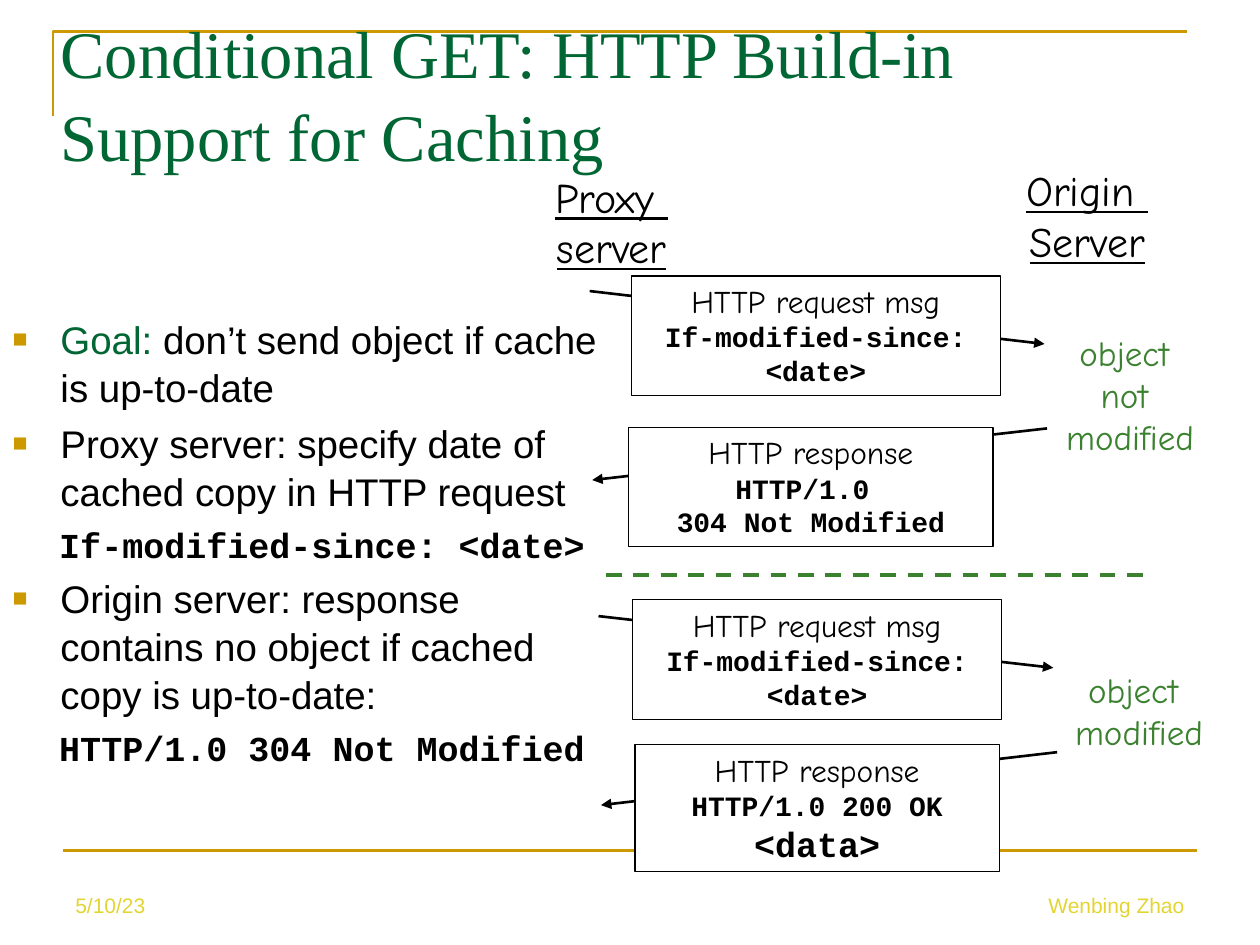
"""Build a slide on how conditional GET supports caching in HTTP."""
from lxml.etree import SubElement as Sub
from pptx import Presentation
from pptx.dml.color import RGBColor
from pptx.enum.dml import MSO_LINE as Dash
from pptx.enum.shapes import MSO_CONNECTOR as Conn, MSO_SHAPE as Shape
from pptx.enum.text import MSO_ANCHOR as Anchor, MSO_AUTO_SIZE as Auto, PP_ALIGN as Align
from pptx.oxml.ns import qn
from pptx.util import Inches, Pt

hue = RGBColor.from_string
GOLD, GREEN, LEAF, BLACK = "CC9900", "006633", "3B812F", "000000"
SANS = dict(name="Arial", size=22, color=BLACK)
CODE = dict(name="Courier New", size=20, bold=True, color=BLACK)
HAND = dict(name="Comic Neue", size=18, color=BLACK)
HEAD = HAND | dict(size=24, underline=True)
NOTE = HAND | dict(size=20, color=LEAF)
SMALL = CODE | dict(size=16)
FOOT = dict(name="Arial", size=12, color="E2D532")


def write(frame, rows, align=Align.CENTER):
    """Fill a frame with paragraphs, each a list of (text, format) runs."""
    for i, runs in enumerate(rows):
        par = frame.paragraphs[0] if i == 0 else frame.add_paragraph()
        par.alignment = align
        for text, form in runs:
            run = par.add_run()
            run.text = text
            for key, val in form.items():
                if key == "color":
                    run.font.color.rgb = hue(val)
                else:
                    setattr(run.font, key, Pt(val) if key == "size" else val)


def draw(x1, y1, x2, y2, color, width):
    """Draw a straight line without a shadow."""
    line = slide.shapes.add_connector(
        Conn.STRAIGHT, Inches(x1), Inches(y1), Inches(x2), Inches(y2))
    line.line.color.rgb = hue(color)
    line.line.width = Pt(width)
    Sub(line._element.spPr, qn("a:effectLst"))
    return line.line


deck = Presentation()
deck.slide_width, deck.slide_height = Inches(10), Inches(7.5)
slide = deck.slides.add_slide(deck.slide_layouts[1])
shapes = slide.shapes
title, body = shapes.title, shapes.placeholders[1]

path = shapes.build_freeform(Inches(0.42), Inches(0.92))
path.add_line_segments(
    [(Inches(0.42), Inches(0.25)), (Inches(9.42), Inches(0.25))], close=False)
frame = path.convert_to_shape()
frame.shadow.inherit = False
frame.fill.background()
frame.line.color.rgb = hue(GOLD)
frame.line.width = Pt(1.5)
draw(0.5, 6.75, 9.5, 6.75, GOLD, 1.5)

for holder, (x, y, w, h), anchor in (
        (title, (0.38, 0.25, 8.71, 0.95), Anchor.MIDDLE),
        (body, (0, 2.44, 4.92, 3.87), Anchor.TOP)):
    holder.left, holder.top, holder.width, holder.height = map(Inches, (x, y, w, h))
    holder.text_frame.auto_size = Auto.NONE
    holder.text_frame.vertical_anchor = anchor
    shapes._spTree.append(holder._element)

write(title.text_frame, [[("Conditional GET: HTTP Build-in Support for Caching",
                           dict(name="Times New Roman", size=38, color=GREEN))]], Align.LEFT)
title.text_frame.paragraphs[0].line_spacing = 1.05
write(body.text_frame, [
    [("Goal:", SANS | dict(color=GREEN)),
     (" don’t send object if cache is up-to-date", SANS)],
    [("Proxy server: specify date of cached copy in HTTP request", SANS)],
    [("If-modified-since: <date>", CODE)],
    [("Origin server: response contains no object if cached copy is up-to-date:", SANS)],
    [("HTTP/1.0 304 Not Modified", CODE)],
], Align.LEFT)
for par in body.text_frame.paragraphs:
    code = par.runs[0].font.name == CODE["name"]
    par.level = int(code)
    par.space_before = Pt(4.5)
    par.line_spacing = 1.04
    props = par._p.get_or_add_pPr()
    props.set("marL", str(Inches(0.73 if code else 0.38)))
    props.set("indent", str(Inches(-0.36 if code else -0.38)))
    if code:
        Sub(props, qn("a:buNone"))
    else:
        Sub(Sub(props, qn("a:buClr")), qn("a:srgbClr"), val=GOLD)
        Sub(props, qn("a:buSzPct"), val="65000")
        Sub(props, qn("a:buFont"), typeface="Arial")
        Sub(props, qn("a:buChar"), char="■")

for ends in ((4.68, 2.31, 8.29, 2.73), (8.31, 3.4, 4.7, 3.81),
             (4.75, 4.89, 8.36, 5.3), (8.39, 5.97, 4.77, 6.39)):
    arrow = draw(*ends, BLACK, 1.5)
    Sub(arrow._get_or_add_ln(), qn("a:tailEnd"), type="triangle")
draw(4.81, 4.56, 9.08, 4.56, LEAF, 2.25).dash_style = Dash.DASH

ask = [("HTTP request msg", HAND), ("If-modified-since: <date>", SMALL)]
reply = ("HTTP response", HAND)
for x, y, w, h, rows in (
        (5.01, 2.19, 2.93, 0.95, ask),
        (4.99, 3.39, 2.89, 0.95,
         [reply, ("HTTP/1.0 ", SMALL), ("304 Not Modified", SMALL)]),
        (5.02, 4.76, 2.93, 0.95, ask),
        (5.04, 5.91, 2.89, 1.01,
         [reply, ("HTTP/1.0 200 OK", SMALL), ("<data>", CODE)])):
    box = shapes.add_shape(Shape.RECTANGLE, Inches(x), Inches(y), Inches(w), Inches(h))
    box.shadow.inherit = False
    box.fill.solid()
    box.fill.fore_color.rgb = hue("FFFFFF")
    box.line.color.rgb = hue(BLACK)
    box.line.width = Pt(0.75)
    box.text_frame.vertical_anchor = Anchor.TOP
    write(box.text_frame, [[row] for row in rows])

for x, y, w, h, rows, form in (
        (4.25, 1.31, 1.21, 0.9, ("Proxy ", "server"), HEAD),
        (7.99, 1.26, 1.28, 0.9, ("Origin ", "Server"), HEAD),
        (8.3, 2.58, 1.34, 1.1, ("object ", "not ", "modified"), NOTE),
        (8.37, 5.26, 1.34, 0.77, ("object ", "modified"), NOTE)):
    label = shapes.add_textbox(Inches(x), Inches(y), Inches(w), Inches(h)).text_frame
    label.word_wrap = False
    write(label, [[(row, form)] for row in rows])

for x, text, align in ((0.5, "5/10/23", Align.LEFT), (7.17, "Wenbing Zhao", Align.RIGHT)):
    foot = shapes.add_textbox(Inches(x), Inches(6.83), Inches(2.33), Inches(0.5)).text_frame
    foot.word_wrap = True
    foot.vertical_anchor = Anchor.BOTTOM
    write(foot, [[(text, FOOT)]], align)

deck.save("out.pptx")
